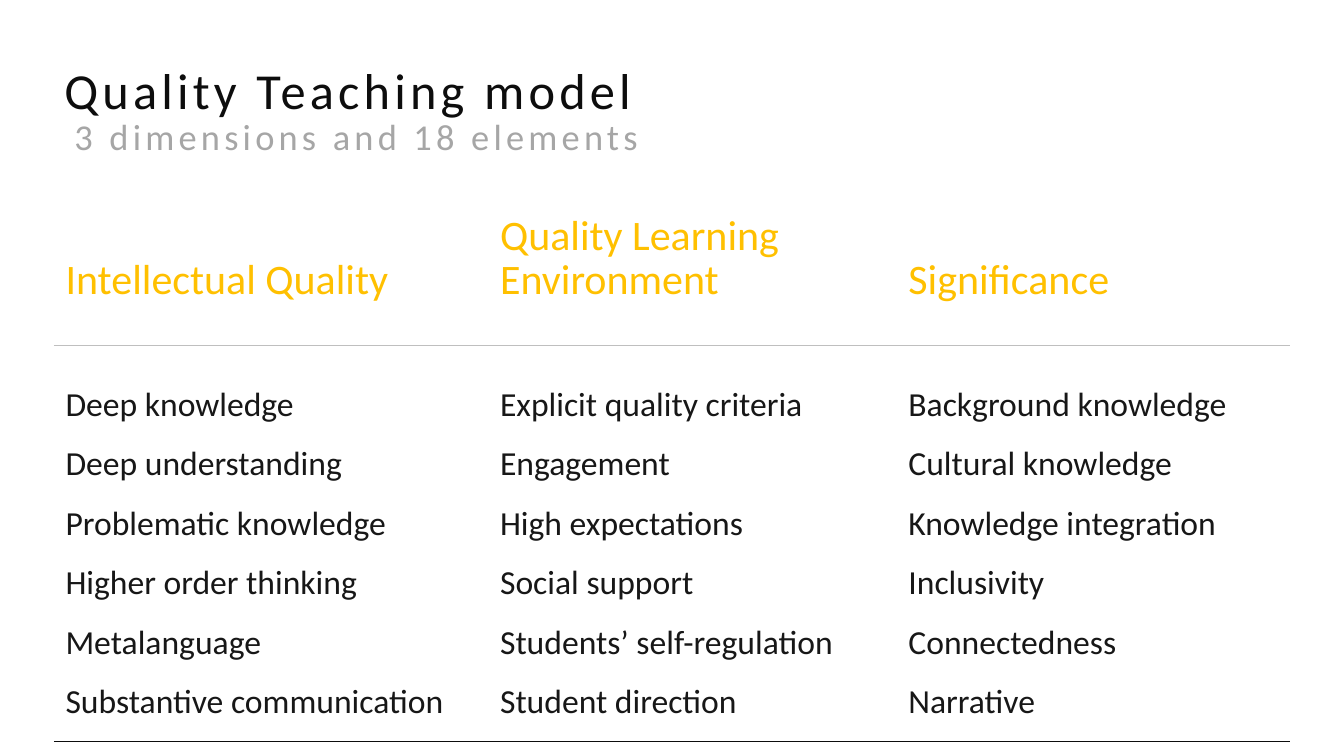
from dataclasses import dataclass
from lxml import etree
from pptx import Presentation
from pptx import util as u
from pptx.dml import color
from pptx.enum import text
from pptx.oxml import ns


@dataclass(frozen=True)
class Theme:
    face: str = "Calibri"
    ink: str = "0D0D0D"
    body: str = "171717"
    gold: str = "FFC000"
    grey: str = "A6A6A6"
    rule: str = "BFBFBF"
    title: int = 36
    sub: int = 26
    head: int = 30
    item: int = 24
    gap: int = 18


THEME = Theme()
DIMS = {
    "Intellectual Quality": [
        "Deep knowledge", "Deep understanding", "Problematic knowledge",
        "Higher order thinking", "Metalanguage", "Substantive communication"],
    "Quality Learning Environment": [
        "Explicit quality criteria", "Engagement", "High expectations",
        "Social support", "Students’ self-regulation", "Student direction"],
    "Significance": [
        "Background knowledge", "Cultural knowledge", "Knowledge integration",
        "Inclusivity", "Connectedness", "Narrative"],
}


def apply(obj, form):
    for name, value in form.items():
        setattr(obj, name, value)


def write(frame, words, size, tone, **form):
    para = frame.paragraphs[0]
    apply(para, {"line_spacing": 0.85, **form})
    run = para.add_run()
    run.text = words
    apply(run.font, {"name": THEME.face, "size": u.Pt(size)})
    run.font.color.rgb = color.RGBColor.from_string(tone)
    return run


def label(slide, box, words, size, tone):
    frame = slide.shapes.add_textbox(*map(u.Inches, box)).text_frame
    apply(frame, {"word_wrap": True,
                  "auto_size": text.MSO_AUTO_SIZE.SHAPE_TO_FIT_TEXT})
    run = write(frame, words, size, tone)
    run.font._element.set("spc", "300")


def heading(slide, box):
    left, top, wide, high = box
    label(slide, (left, top, wide, 0.62), "Quality Teaching model",
          THEME.title, THEME.ink)
    label(slide, (left + 0.1, top + 0.52, 6.6, high - 0.52),
          "3 dimensions and 18 elements", THEME.sub, THEME.grey)


def border(cell, side, tone, width):
    line = etree.Element(ns.qn(f"a:ln{side}"), w=str(u.Pt(width)))
    fill = etree.SubElement(line, ns.qn("a:solidFill"))
    etree.SubElement(fill, ns.qn("a:srgbClr"), val=tone)
    cell._tc.get_or_add_tcPr().insert(0, line)


def spacer(cell, side):
    apply(cell, {"margin_top": u.Inches(0.06), "margin_bottom": u.Inches(0.06)})
    para = cell.text_frame.paragraphs[0]
    etree.SubElement(para._p, ns.qn("a:endParaRPr"), sz=str(THEME.gap * 100))
    border(cell, side, THEME.rule, 0.5)


def grid(slide, box):
    cols = [4.31, 4.05, 3.89]
    rows = [0.47, 0.03, 0] + [0.59] * 5 + [0.55]
    table = slide.shapes.add_table(
        len(rows), len(cols), *map(u.Inches, box)).table
    apply(table, {"first_row": False, "horz_banding": False})
    for row, high in zip(table.rows, rows):
        row.height = u.Inches(high)
    for col, wide in zip(table.columns, cols):
        col.width = u.Inches(wide)
    pads = {"margin_left": u.Inches(0.11), "margin_right": u.Inches(0.11),
            "margin_top": 0, "margin_bottom": 0}
    for cell in table.iter_cells():
        cell.fill.background()
        apply(cell, pads)
    for c, (name, items) in enumerate(DIMS.items()):
        head = table.cell(0, c)
        head.vertical_anchor = text.MSO_ANCHOR.BOTTOM
        write(head.text_frame, name, THEME.head, THEME.gold,
              space_before=u.Pt(2), space_after=u.Pt(12))
        spacer(table.cell(1, c), "B")
        spacer(table.cell(2, c), "T")
        for r, item in enumerate(items, 3):
            write(table.cell(r, c).text_frame, item, THEME.item, THEME.body,
                  space_before=u.Pt(2), space_after=u.Pt(2))
        border(table.cell(len(rows) - 1, c), "B", THEME.ink, 0.25)


def main():
    deck = Presentation()
    apply(deck, {"slide_width": u.Inches(13.33),
                 "slide_height": u.Inches(7.5)})
    slide = deck.slides.add_slide(deck.slide_layouts[6])
    grid(slide, (0.54, 2.14, 12.25, 4.53))
    heading(slide, (0.54, 0.63, 11.89, 0.99))
    deck.save("out.pptx")


if __name__ == "__main__":
    main()
